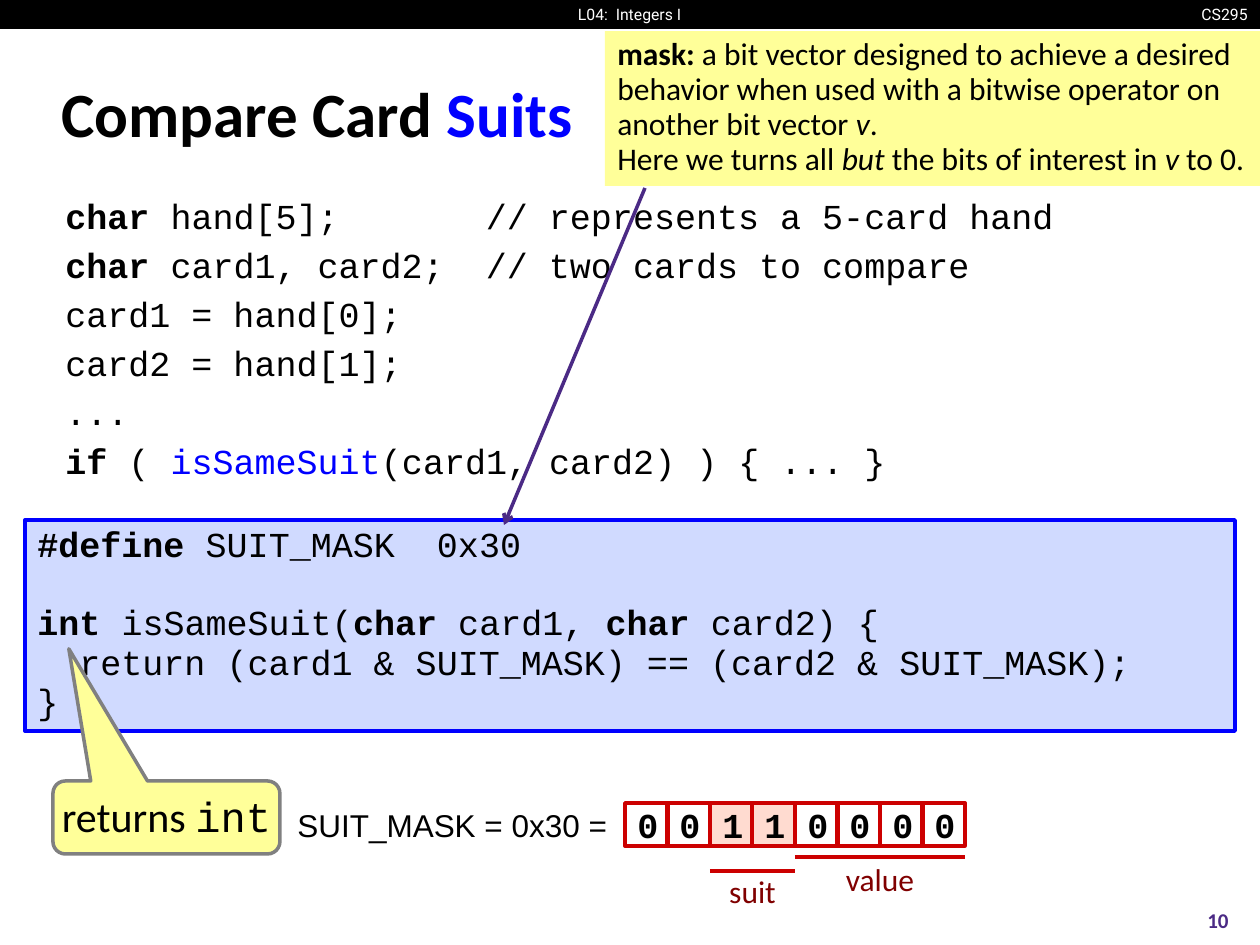
from dataclasses import dataclass
from typing import Optional

import lxml.etree
import pptx
import pptx.dml.color
import pptx.enum.shapes
import pptx.enum.text
import pptx.oxml.ns
import pptx.util

EMU_PER_PX = 914400 / 126
SHAPE = pptx.enum.shapes.MSO_SHAPE
ALIGN = pptx.enum.text.PP_ALIGN
ANCHOR = pptx.enum.text.MSO_ANCHOR
BLACK, WHITE, BLUE, RED = "000000", "FFFFFF", "0000FF", "CC0000"
YELLOW, PURPLE, MAROON = "FFFF99", "4B2A85", "800000"
LINE_BREAK = "\n"


@dataclass(frozen=True)
class Run:
    text: str
    bold: bool = False
    italic: bool = False
    color: Optional[str] = None
    font: Optional[str] = None


@dataclass(frozen=True)
class Paragraph:
    runs: list[Run]
    before: float = 0


@dataclass(frozen=True)
class Style:
    font: str
    size: int
    color: str = BLACK
    align: int = ALIGN.LEFT
    spacing: float = 1.0
    anchor: int = ANCHOR.TOP
    wrap: bool = True


@dataclass(frozen=True)
class Box:
    left: int
    top: int
    width: int
    height: int

    def emu(self) -> tuple[int, ...]:
        return tuple(px(v) for v in (self.left, self.top, self.width, self.height))


def px(value: int) -> int:
    return round(value * EMU_PER_PX)


def rgb(value: str) -> pptx.dml.color.RGBColor:
    return pptx.dml.color.RGBColor.from_string(value)


def write(frame, paragraphs: list[Paragraph], style: Style) -> None:
    frame.word_wrap = style.wrap
    frame.auto_size = pptx.enum.text.MSO_AUTO_SIZE.NONE
    frame.vertical_anchor = style.anchor
    for index, content in enumerate(paragraphs):
        paragraph = frame.add_paragraph() if index else frame.paragraphs[0]
        paragraph.alignment = style.align
        paragraph.line_spacing = style.spacing
        paragraph.space_before = pptx.util.Pt(content.before)
        for part in content.runs:
            if part.text == LINE_BREAK:
                paragraph.add_line_break()
                continue
            run = paragraph.add_run()
            run.text = part.text
            run.font.name = part.font or style.font
            run.font.size = pptx.util.Pt(style.size)
            run.font.bold = part.bold
            run.font.italic = part.italic
            run.font.color.rgb = rgb(part.color or style.color)


def add_text(slide, box: Box, paragraphs: list[Paragraph], style: Style) -> None:
    write(slide.shapes.add_textbox(*box.emu()).text_frame, paragraphs, style)


def add_panel(slide, box: Box, fill: Optional[str] = None, line: Optional[str] = None,
              weight: float = 2, kind: int = SHAPE.RECTANGLE):
    panel = slide.shapes.add_shape(kind, *box.emu())
    panel.shadow.inherit = False
    if fill:
        panel.fill.solid()
        panel.fill.fore_color.rgb = rgb(fill)
    else:
        panel.fill.background()
    if line:
        panel.line.color.rgb = rgb(line)
        panel.line.width = pptx.util.Pt(weight)
    else:
        panel.line.fill.background()
    return panel


def add_line(slide, start: tuple[int, int], end: tuple[int, int], color: str,
             head: Optional[str] = None) -> None:
    line = slide.shapes.add_connector(
        pptx.enum.shapes.MSO_CONNECTOR.STRAIGHT, *(px(v) for v in start + end))
    line.line.color.rgb = rgb(color)
    line.line.width = pptx.util.Pt(2)
    if head:
        lxml.etree.SubElement(line.line._get_or_add_ln(),
                              pptx.oxml.ns.qn("a:tailEnd"), type=head)
    lxml.etree.SubElement(line._element.spPr, pptx.oxml.ns.qn("a:effectLst"))


def add_header(slide) -> None:
    add_panel(slide, Box(0, 0, 1260, 29), BLACK)
    for box, label, align in [(Box(1186, 0, 74, 30), "CS295", ALIGN.RIGHT),
                              (Box(564, 0, 131, 30), "L04:  Integers I", ALIGN.CENTER)]:
        add_text(slide, box, [Paragraph([Run(label)])],
                 Style("Roboto", 9, WHITE, align, 0.93, wrap=False))


def add_title(slide) -> None:
    title = slide.shapes.title
    title.left, title.top, title.width, title.height = Box(49, 60, 1158, 105).emu()
    write(title.text_frame,
          [Paragraph([Run("Compare Card ", True), Run("Suits", True, color=BLUE)])],
          Style("Calibri", 36, anchor=ANCHOR.MIDDLE))


def add_usage_code(slide) -> None:
    lines = [
        [Run("char", True), Run(" hand[5];       // represents a 5-card hand")],
        [Run("char", True), Run(" card1, card2;  // two cards to compare")],
        [Run("card1 = hand[0];")],
        [Run("card2 = hand[1];")],
        [Run("...")],
        [Run("if", True), Run(" ( "), Run("isSameSuit", color=BLUE),
         Run("(card1, card2) ) { ... }")],
    ]
    add_text(slide, Box(53, 188, 1184, 315), [Paragraph(runs, 4) for runs in lines],
             Style("Courier New", 20))


def add_mask_bits(slide, bits: str) -> None:
    left, top, width, cell = 625, 803, 340, 43
    edges = [left + width * i // len(bits) for i in range(len(bits) + 1)]
    add_text(slide, Box(285, 803, 339, 49), [Paragraph([Run("SUIT_MASK = 0x30 =")])],
             Style("Arial", 18, spacing=0.93, wrap=False))
    for edge, bit in zip(edges, bits):
        panel = add_panel(slide, Box(edge, top, cell, cell),
                          "FFDBD0" if bit == "1" else None, RED)
        write(panel.text_frame, [Paragraph([Run(bit, True)])],
              Style("Courier New", 20, align=ALIGN.CENTER, anchor=ANCHOR.MIDDLE))
    for label, first, last, rule_top, label_top in [("suit", 2, 4, 871, 869),
                                                    ("value", 4, 8, 857, 857)]:
        start, end = edges[first], edges[last]
        add_line(slide, (start, rule_top), (end, rule_top), RED)
        add_text(slide, Box(start, label_top, end - start, 49),
                 [Paragraph([Run(label)])],
                 Style("Calibri", 18, MAROON, ALIGN.CENTER, 0.93))


def add_mask_definition(slide) -> None:
    panel = add_panel(slide, Box(605, 31, 655, 155), YELLOW)
    write(panel.text_frame, [Paragraph([
        Run("mask:", True),
        Run(" a bit vector designed to achieve a desired behavior when used with "
            "a bitwise operator on another bit vector "),
        Run("v", italic=True), Run("."), Run(LINE_BREAK),
        Run("Here we turns all "), Run("but", italic=True),
        Run(" the bits of interest in "), Run("v", italic=True), Run(" to 0."),
    ])], Style("Calibri", 18, spacing=0.93))


def add_function_code(slide) -> None:
    panel = add_panel(slide, Box(25, 520, 1210, 211), "D0DAFF", BLUE, 2.25)
    write(panel.text_frame, [
        Paragraph([Run("#define ", True), Run("SUIT_MASK  0x30")]),
        Paragraph([Run("int ", True), Run("isSameSuit("), Run("char", True),
                   Run(" card1, "), Run("char", True), Run(" card2) {")], 22.5),
        Paragraph([Run("  return (card1 & SUIT_MASK) == (card2 & SUIT_MASK);")]),
        Paragraph([Run("}")]),
    ], Style("Courier New", 20, spacing=0.93))


def add_return_callout(slide) -> None:
    callout = add_panel(slide, Box(53, 781, 227, 73), YELLOW, "808080",
                        kind=SHAPE.ROUNDED_RECTANGULAR_CALLOUT)
    for index, value in enumerate((-0.43, -2.31, 0.17)):
        callout.adjustments[index] = value
    callout.text_frame.margin_left = callout.text_frame.margin_right = 0
    write(callout.text_frame,
          [Paragraph([Run("returns "), Run("int", font="Courier New")])],
          Style("Calibri", 24, align=ALIGN.CENTER))


def main() -> None:
    deck = pptx.Presentation()
    deck.slide_width, deck.slide_height = px(1260), px(945)
    slide = deck.slides.add_slide(deck.slide_layouts.get_by_name("Title Only"))
    add_header(slide)
    add_title(slide)
    add_usage_code(slide)
    add_text(slide, Box(1176, 895, 84, 50), [Paragraph([Run("10", True)])],
             Style("Calibri", 12, PURPLE, ALIGN.CENTER, anchor=ANCHOR.MIDDLE))
    add_mask_bits(slide, "00110000")
    add_mask_definition(slide)
    add_function_code(slide)
    add_return_callout(slide)
    add_line(slide, (645, 188), (504, 525), PURPLE, "arrow")
    deck.save("out.pptx")


if __name__ == "__main__":
    main()
